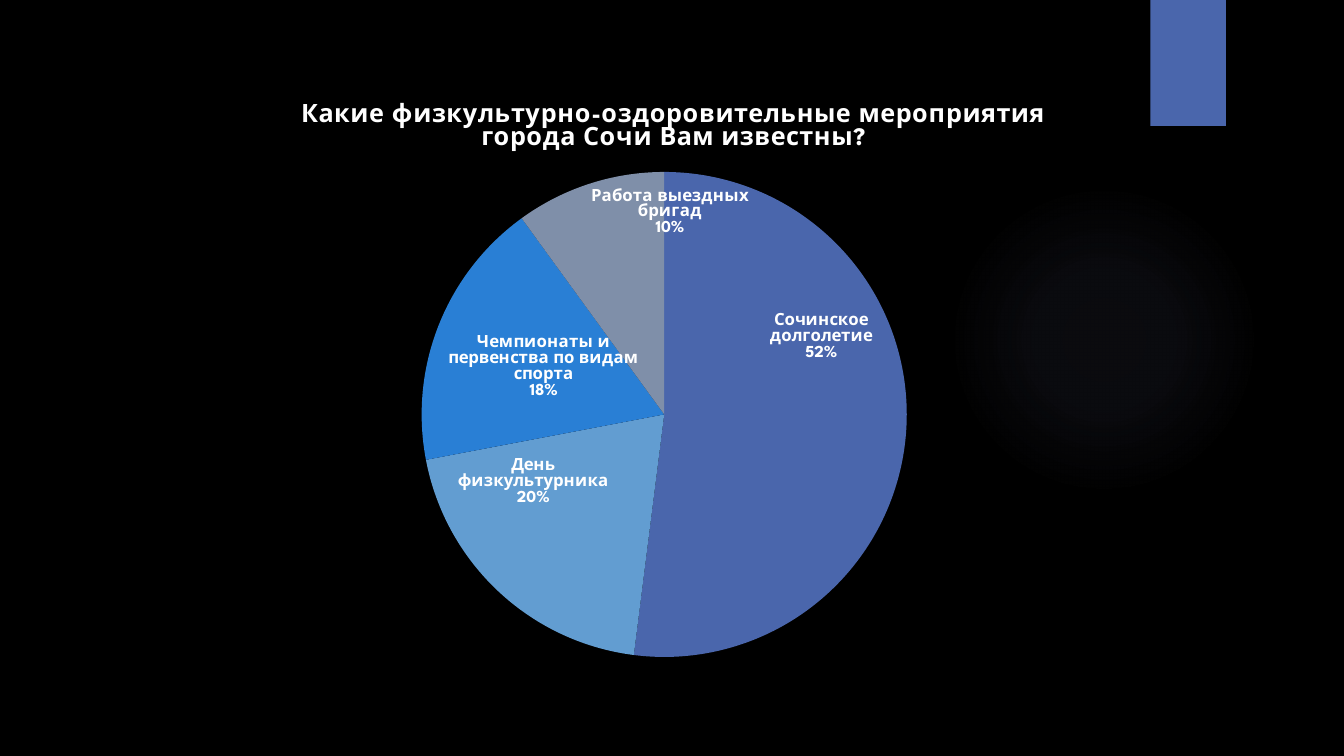
from dataclasses import dataclass

from lxml.etree import SubElement as Sub
from pptx import Presentation
from pptx.chart.chart import Chart
from pptx.chart.data import CategoryChartData as ChartData
from pptx.dml.color import RGBColor as Rgb
from pptx.enum.chart import XL_CHART_TYPE as Kind, XL_LABEL_POSITION as Pos
from pptx.enum.shapes import MSO_SHAPE as Form
from pptx.oxml import parse_xml
from pptx.oxml.ns import nsdecls, qn
from pptx.util import Inches, Pt

WIDE, HIGH = Inches(13.33), Inches(7.5)
CELL = Inches(0.1)
FONT = "League Spartan"
WHITE, BLUE, GLOW = "FFFFFF", "4A66AC", "9297CF"
TITLE = "Какие физкультурно-оздоровительные мероприятия города Сочи Вам известны?"


@dataclass
class Box:
    """Left, top, width and height in grid cells."""
    x: float
    y: float
    w: float
    h: float

    def place(self) -> tuple[int, ...]:
        return tuple(int(n * CELL) for n in (self.x, self.y, self.w, self.h))


@dataclass
class Slice:
    """One answer; dx and dy shift its label by percents of the chart."""
    name: str
    value: int
    tint: str
    dx: float
    dy: float


SLICES = [
    Slice("Сочинское долголетие", 52, BLUE, -2.6, -15.3),
    Slice("День физкультурника", 20, "629DD1", -4.2, -13.5),
    Slice("Чемпионаты и первенства по видам спорта", 18, "297FD5", 0.4, 1.5),
    Slice("Работа выездных бригад", 10, "7F8FA9", 0, 0),
]


def color(code: str) -> Rgb:
    return Rgb.from_string(code)


def style(font, size: int, bold: bool) -> None:
    font.name, font.size, font.bold = FONT, Pt(size), bold
    font.color.rgb = color(WHITE)


def layout(modes: dict[str, str], **parts: float):
    """Manual chart layout, with parts in percents of the chart."""
    root = parse_xml(f"<c:layout {nsdecls('c')}/>")
    manual = Sub(root, qn("c:manualLayout"))
    shares = {name: str(val / 100) for name, val in parts.items()}
    for name, val in (modes | shares).items():
        Sub(manual, qn(f"c:{name}")).set("val", val)
    return root


def add_form(slide, form: Form, box: Box, tint: str):
    shape = slide.shapes.add_shape(form, *box.place())
    shape.shadow.inherit = False
    shape.line.fill.background()
    shape.fill.solid()
    shape.fill.fore_color.rgb = color(tint)
    return shape


def add_glow(slide, box: Box) -> None:
    shape = add_form(slide, Form.OVAL, box, GLOW)
    stops = "".join(
        f'<a:gs pos="{pos}000"><a:srgbClr val="{GLOW}">'
        f'<a:alpha val="{alpha}000"/></a:srgbClr></a:gs>'
        for pos, alpha in ((0, 7), (36, 6), (69, 0)))
    fill = parse_xml(
        f'<a:gradFill {nsdecls("a")}><a:gsLst>{stops}</a:gsLst>'
        '<a:path path="circle"><a:fillToRect l="50000" t="50000" '
        'r="50000" b="50000"/></a:path></a:gradFill>')
    props = shape.element.spPr
    props.replace(props.find(qn("a:solidFill")), fill)


def add_tab(slide, box: Box) -> None:
    shape = add_form(slide, Form.RECTANGLE, box, BLUE)
    effects = shape.element.spPr.find(qn("a:effectLst"))
    effects.append(parse_xml(
        f'<a:outerShdw {nsdecls("a")} blurRad="{Pt(3)}" dist="{Pt(2)}" '
        'dir="5400000"><a:srgbClr val="000000"><a:alpha val="45000"/>'
        '</a:srgbClr></a:outerShdw>'))


def set_title(chart: Chart) -> None:
    chart.has_title = True
    title = chart.chart_title
    title.include_in_layout = False
    para = title.text_frame.paragraphs[0]
    para.text = TITLE
    style(para.font, 18, True)
    para.font._element.set("spc", "50")


def split_lines(node) -> None:
    """Put the percentage of a label on a line of its own."""
    mark = parse_xml(f"<c:separator {nsdecls('c')}>\n</c:separator>")
    last = node.find(qn("c:showBubbleSize"))
    if last is None:
        last = node.find(qn("c:showPercent"))
    last.addnext(mark)


def set_labels(plot) -> None:
    plot.has_data_labels = True
    labels = plot.data_labels
    style(labels.font, 12, True)
    labels.number_format, labels.number_format_is_linked = "0%", False
    labels.position = Pos.INSIDE_END
    labels.show_value = False
    labels.show_percentage = labels.show_category_name = True
    split_lines(labels._element)


def set_slices(plot) -> None:
    series = plot.series[0]
    for i, part in enumerate(SLICES):
        point = series.points[i]
        point.format.fill.solid()
        point.format.fill.fore_color.rgb = color(part.tint)
        point.format.line.fill.background()
        label = point.data_label
        style(label.font, 12, True)
        label.position = Pos.INSIDE_END
        node = series._element.find(qn("c:dLbls")).findall(qn("c:dLbl"))[i]
        if part.dx or part.dy:
            node.insert(1, layout({}, x=part.dx, y=part.dy))
        for tag, on in (("showVal", 0), ("showCatName", 1), ("showPercent", 1)):
            node.find(qn(f"c:{tag}")).set("val", str(on))
        split_lines(node)


def add_pie(slide, box: Box) -> None:
    data = ChartData(number_format="0")
    data.categories = [part.name for part in SLICES]
    data.add_series(TITLE, [part.value for part in SLICES])
    chart = slide.shapes.add_chart(Kind.PIE, *box.place(), data).chart
    chart.has_legend = False
    style(chart.font, 10, False)
    set_title(chart)
    plot = chart.plots[0]
    plot.vary_by_categories = True
    set_labels(plot)
    set_slices(plot)
    area = chart._chartSpace.chart.plotArea
    old = area.find(qn("c:layout"))
    if old is not None:
        area.remove(old)
    modes = {"layoutTarget": "inner", "xMode": "edge", "yMode": "edge"}
    area.insert(0, layout(modes, x=26.2, y=15.45, w=45.85, h=81.15))


def main() -> None:
    deck = Presentation()
    deck.slide_width, deck.slide_height = WIDE, HIGH
    slide = deck.slides.add_slide(deck.slide_layouts[6])
    slide.background.fill.solid()
    slide.background.fill.fore_color.rgb = color("000000")
    add_glow(slide, Box(94.1, 18.3, 30.8, 30.8))
    add_tab(slide, Box(114.1, 0, 7.5, 12.5))
    add_pie(slide, Box(14.3, 7.9, 105, 59.3))
    deck.save("out.pptx")


if __name__ == "__main__":
    main()
